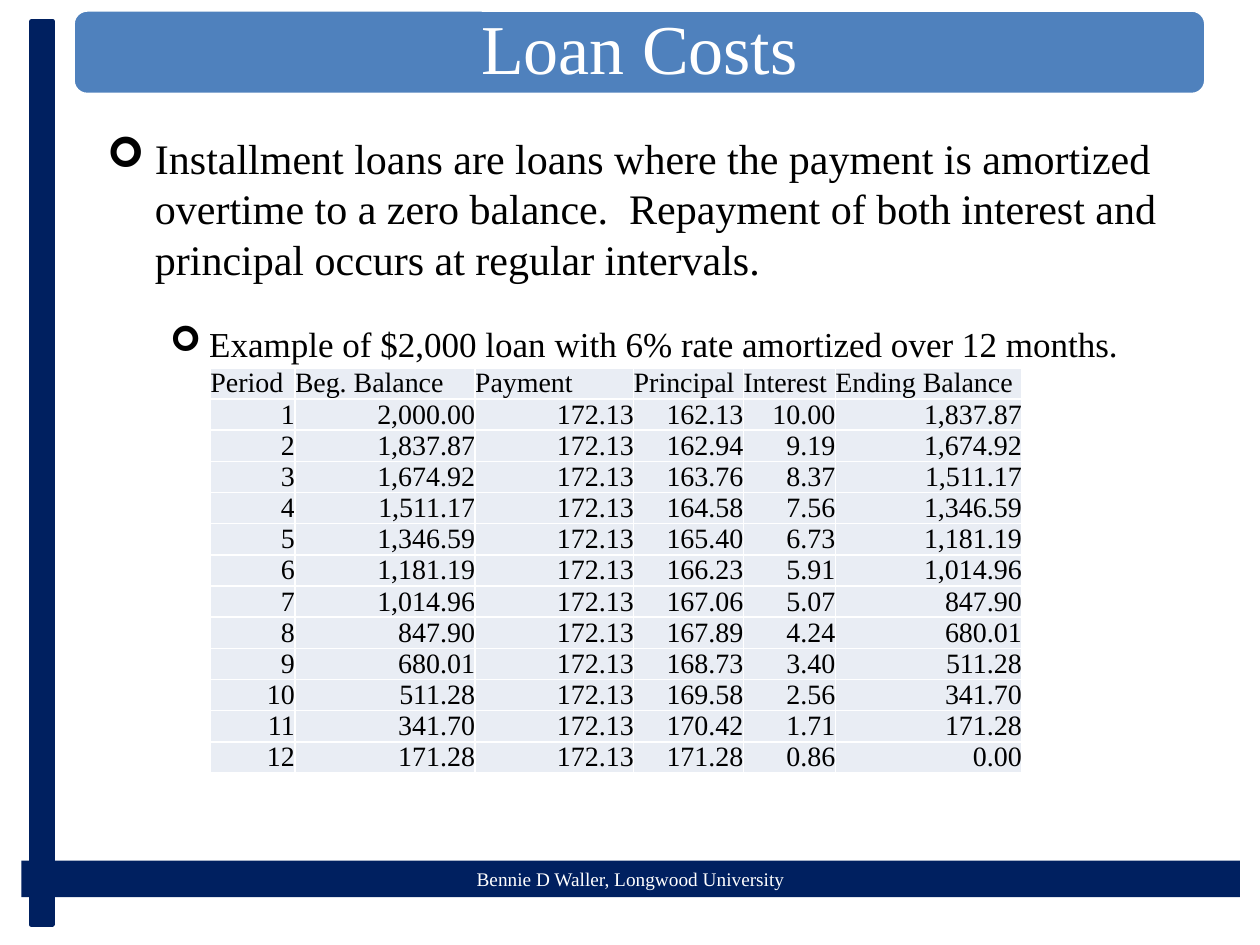
from lxml.etree import SubElement
from pptx import Presentation
from pptx.dml.color import RGBColor
from pptx.enum.shapes import MSO_SHAPE as SHAPE
from pptx.enum.text import MSO_ANCHOR as ANCHOR, MSO_AUTO_SIZE as AUTO, PP_ALIGN as ALIGN
from pptx.oxml.ns import qn
from pptx.util import Inches, Pt

FONT = "Times New Roman"
NAVY, BLUE, PALE, WHITE, BLACK = "002060", "4F81BD", "E9EDF4", "FFFFFF", "000000"
FRAME = dict(word_wrap=True, auto_size=AUTO.NONE)
NO_MARGIN = dict(margin_left=0, margin_right=0, margin_top=0, margin_bottom=0)
BULLETS = [
    ("Installment loans are loans where the payment is amortized overtime to a zero "
     "balance.  Repayment of both interest and principal occurs at regular intervals.",
     24, 0.38, 0.38),
    ("Example of $2,000 loan with 6% rate amortized over 12 months.", 20, 0.81, 0.31),
]
COLUMNS = [("Period", 0.67), ("Beg. Balance", 1.43), ("Payment", 1.26),
           ("Principal", 0.87), ("Interest", 0.73), ("Ending Balance", 1.48)]


def rgb(color):
    return RGBColor.from_string(color)


def apply(obj, values):
    for name, value in values.items():
        setattr(obj, name, value)


def place(sp, box):
    apply(sp, dict(zip(("left", "top", "width", "height"), map(Inches, box))))


def write(p, text, size, color, align=ALIGN.LEFT):
    p.alignment = align
    r = p.add_run()
    r.text = text
    apply(r.font, dict(name=FONT, size=Pt(size)))
    r.font.color.rgb = rgb(color)


def add_block(s, box, fill, line=None, width=0, shape=SHAPE.RECTANGLE):
    sp = s.shapes.add_shape(shape, *map(Inches, box))
    sp.shadow.inherit = False
    sp.fill.solid()
    sp.fill.fore_color.rgb = rgb(fill)
    if line:
        sp.line.color.rgb = rgb(line)
        sp.line.width = Pt(width)
    else:
        sp.line.fill.background()
    return sp


def add_frame(s, footer_box, bar_box):
    tf = add_block(s, footer_box, NAVY).text_frame
    tf.vertical_anchor = ANCHOR.MIDDLE
    write(tf.paragraphs[0], "Bennie D Waller, Longwood University", 11, WHITE, ALIGN.CENTER)
    add_block(s, bar_box, NAVY, NAVY, 2.5)


def add_title(s, box):
    add_block(s, box, BLUE, WHITE, 2, SHAPE.ROUNDED_RECTANGLE)
    title = s.shapes.title
    place(title, box)
    s.shapes._spTree.append(title._element)
    tf = title.text_frame
    apply(tf, dict(FRAME, vertical_anchor=ANCHOR.MIDDLE))
    p = tf.paragraphs[0]
    p.line_spacing = 0.9
    write(p, "Loan Costs", 40, WHITE, ALIGN.CENTER)


def add_bullets(s, box):
    body = s.placeholders[1]
    place(body, box)
    s.shapes._spTree.append(body._element)
    tf = body.text_frame
    apply(tf, FRAME)
    for level, (text, size, margin, hang) in enumerate(BULLETS):
        p = tf.add_paragraph() if level else tf.paragraphs[0]
        apply(p, dict(level=level, space_before=Pt(size * 0.2), space_after=Pt(18)))
        pPr = p._p.get_or_add_pPr()
        pPr.set("marL", str(Inches(margin)))
        pPr.set("indent", str(-Inches(hang)))
        SubElement(pPr, qn("a:buFont")).set("typeface", "Wingdings")
        SubElement(pPr, qn("a:buChar")).set("char", "➢")
        write(p, text, size, BLACK)


def amortize(balance, rate, months):
    payment = balance * rate / (1 - (1 + rate) ** -months)
    for month in range(1, months + 1):
        interest = balance * rate
        principal = payment - interest
        ending = abs(balance - principal)
        amounts = (balance, payment, principal, interest, ending)
        yield [str(month)] + [f"{amount:,.2f}" for amount in amounts]
        balance = ending


def add_schedule(s, box):
    rows = [[name for name, _ in COLUMNS], *amortize(2000, 0.06 / 12, 12)]
    table = s.shapes.add_table(len(rows), len(COLUMNS), *map(Inches, box)).table
    apply(table, dict(first_row=False, horz_banding=False))
    for column, (_, width) in zip(table.columns, COLUMNS):
        column.width = Inches(width)
    for i, row in enumerate(rows):
        for j, text in enumerate(row):
            cell = table.cell(i, j)
            apply(cell, dict(NO_MARGIN, vertical_anchor=ANCHOR.BOTTOM))
            cell.fill.solid()
            cell.fill.fore_color.rgb = rgb(PALE)
            write(cell.text_frame.paragraphs[0], text, 16, BLACK,
                  ALIGN.RIGHT if i else ALIGN.LEFT)


def main():
    prs = Presentation()
    apply(prs, dict(slide_width=Inches(10), slide_height=Inches(7.5)))
    s = prs.slides.add_slide(prs.slide_layouts[1])
    add_frame(s, (0.17, 6.83, 9.67, 0.29), (0.25, 0.17, 0.17, 7.17))
    add_title(s, (0.58, 0.08, 8.99, 0.67))
    add_bullets(s, (0.75, 1, 9.08, 2.08))
    add_schedule(s, (1.67, 2.92, 6.44, 2.34))
    prs.save("out.pptx")


if __name__ == "__main__":
    main()
